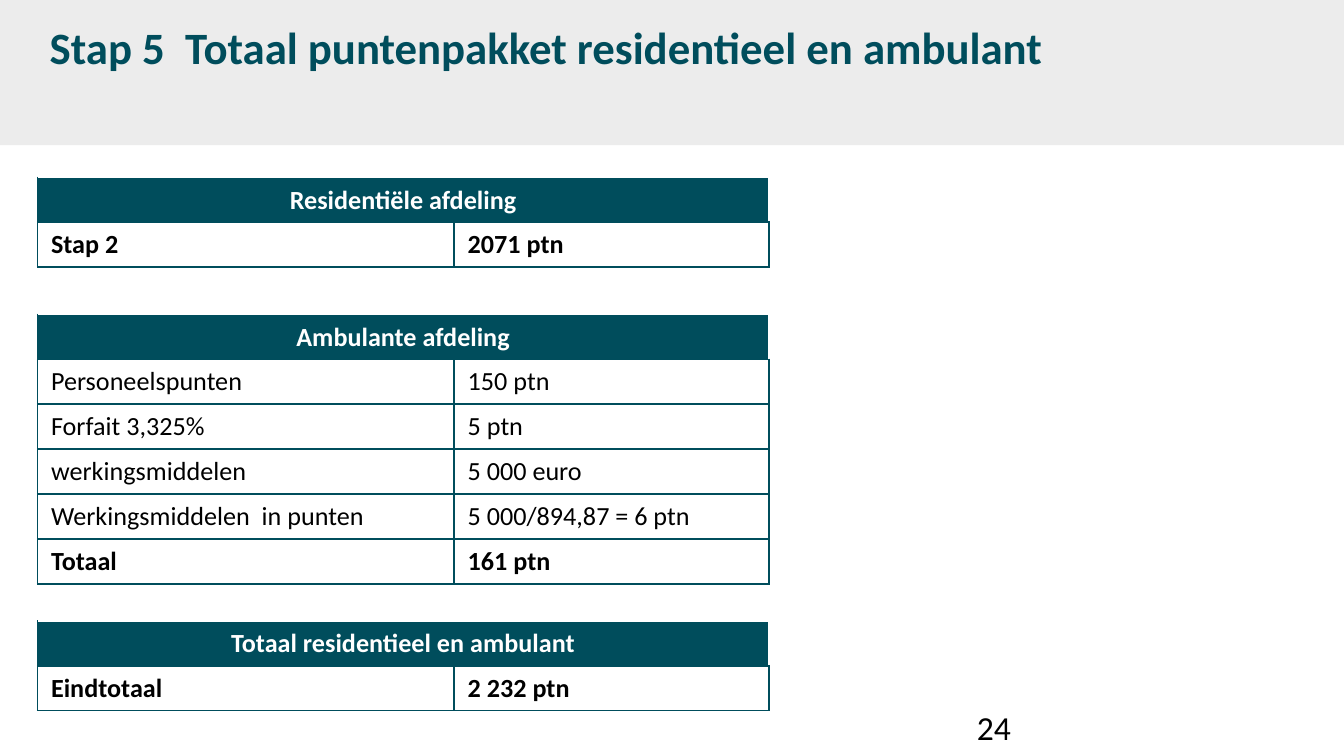
from lxml import etree
from pptx import Presentation
from pptx.dml.color import RGBColor
from pptx.enum.shapes import MSO_SHAPE
from pptx.enum.text import MSO_ANCHOR, PP_ALIGN
from pptx.oxml.ns import qn
from pptx.util import Inches, Pt

RECTANGLE = MSO_SHAPE.RECTANGLE
MIDDLE = MSO_ANCHOR.MIDDLE
LEFT, CENTER = PP_ALIGN.LEFT, PP_ALIGN.CENTER
COLORS = {"teal": "004D5C", "grey": "ECECEC", "white": "FFFFFF", "black": "000000"}
ROW_HEIGHT = 0.31


def write(frame, text, size=14, color="black", bold=False, align=LEFT):
    paragraph = frame.paragraphs[0]
    paragraph.alignment = align
    run = paragraph.add_run()
    run.text = text
    run.font.name = "Calibri"
    run.font.size = Pt(size)
    run.font.bold = bold
    run.font.color.rgb = RGBColor.from_string(COLORS[color])


def set_borders(cell, **sides):
    """Draw 1 pt borders; sides are L, R, T and B in that order."""
    properties = cell._tc.get_or_add_tcPr()
    for side, color in sides.items():
        line = etree.SubElement(properties, qn(f"a:ln{side}"), w=str(Pt(1)))
        fill = etree.SubElement(line, qn("a:solidFill"))
        etree.SubElement(fill, qn("a:srgbClr"), val=COLORS[color])


prs = Presentation()
prs.slide_width = Inches(10)
prs.slide_height = Inches(10 * 9 / 16)
slide = prs.slides.add_slide(prs.slide_layouts[5])

# Header band, placed behind the title
band = slide.shapes.add_shape(RECTANGLE, 0, Inches(-0.02), Inches(10), Inches(1.1))
band.shadow.inherit = False
band.fill.solid()
band.fill.fore_color.rgb = RGBColor.from_string(COLORS["grey"])
band.line.fill.background()
slide.shapes._spTree.insert(2, band._element)

title = slide.shapes.title
title.left, title.top = Inches(0.27), Inches(0)
title.width, title.height = Inches(9.45), Inches(0.69)
title.text_frame.vertical_anchor = MIDDLE
write(title.text_frame, "Stap 5  Totaal puntenpakket residentieel en ambulant",
      size=24, color="teal", bold=True)

page_number = slide.shapes.add_textbox(Inches(7.17), Inches(5.21), Inches(2.33), Inches(0.3))
page_number.text_frame.word_wrap = True
write(page_number.text_frame, "24", size=18)

# Each section: top, heading, rows; the last row is the bold total
sections = [
    (1.32, "Residentiële afdeling", [("Stap 2", "2071 ptn")]),
    (2.34, "Ambulante afdeling", [
        ("Personeelspunten", "150 ptn"),
        ("Forfait 3,325%", "5 ptn"),
        ("werkingsmiddelen", "5 000 euro"),
        ("Werkingsmiddelen  in punten", "5 000/894,87 = 6 ptn"),
        ("Totaal", "161 ptn"),
    ]),
    (4.62, "Totaal residentieel en ambulant", [("Eindtotaal", "2 232 ptn")]),
]
for top, heading, rows in sections:
    row_count = len(rows) + 1
    table = slide.shapes.add_table(row_count, 2, Inches(0.28), Inches(top), Inches(5.44),
                                   Inches(ROW_HEIGHT * row_count)).table
    table.horz_banding = False
    table.columns[0].width, table.columns[1].width = Inches(3.1), Inches(2.34)

    header = table.cell(0, 0)
    header.merge(table.cell(0, 1))
    write(header.text_frame, heading, color="white", bold=True, align=CENTER)
    for cell in (header, table.cell(0, 1)):
        set_borders(cell, L="teal", R="white", T="white", B="teal")
        cell.fill.solid()
        cell.fill.fore_color.rgb = RGBColor.from_string(COLORS["teal"])

    for row, texts in enumerate(rows, start=1):
        for column, text in enumerate(texts):
            cell = table.cell(row, column)
            write(cell.text_frame, text, bold=row == len(rows))
            set_borders(cell, L="teal", R="teal", T="teal", B="teal")
            cell.fill.background()

prs.save("out.pptx")
